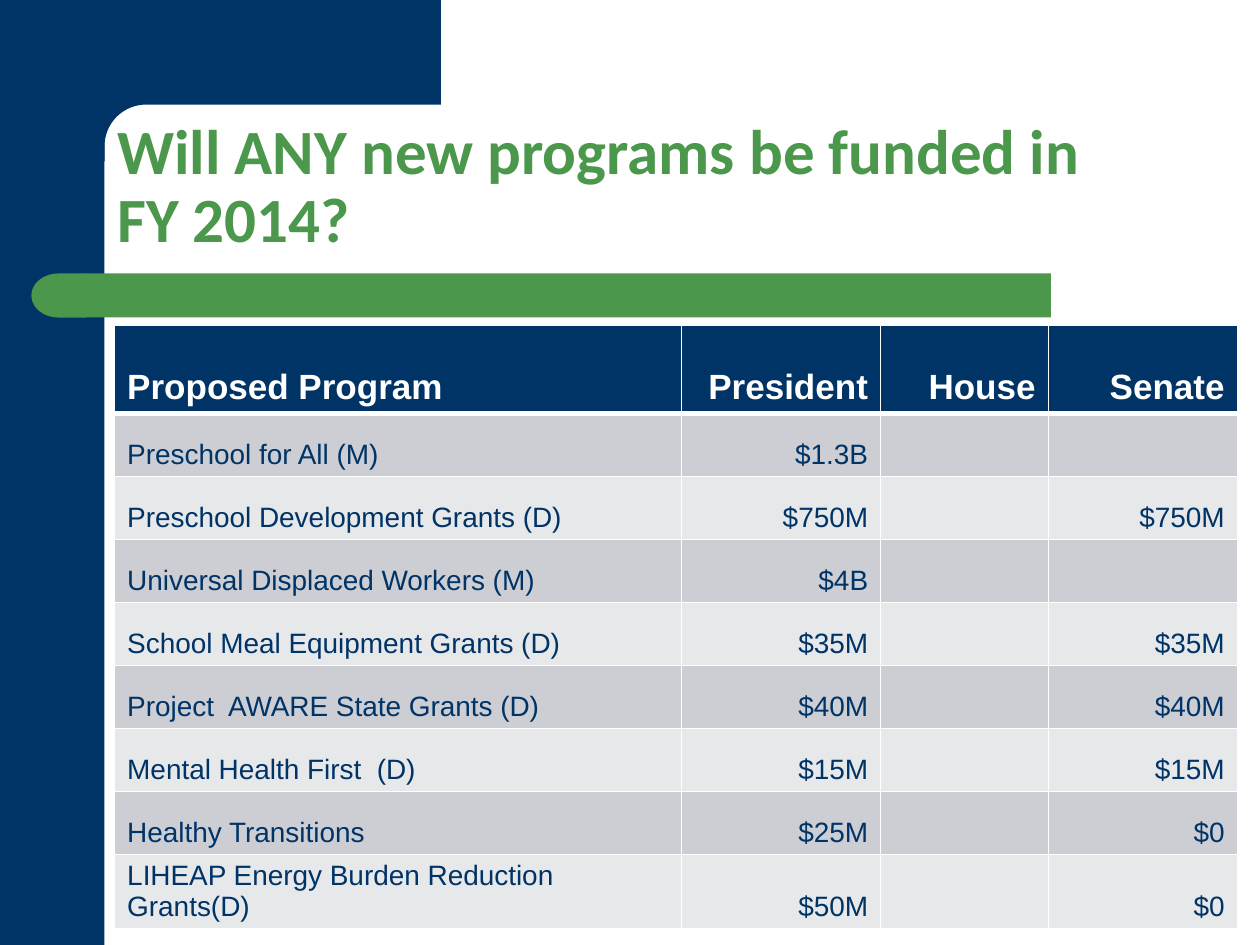
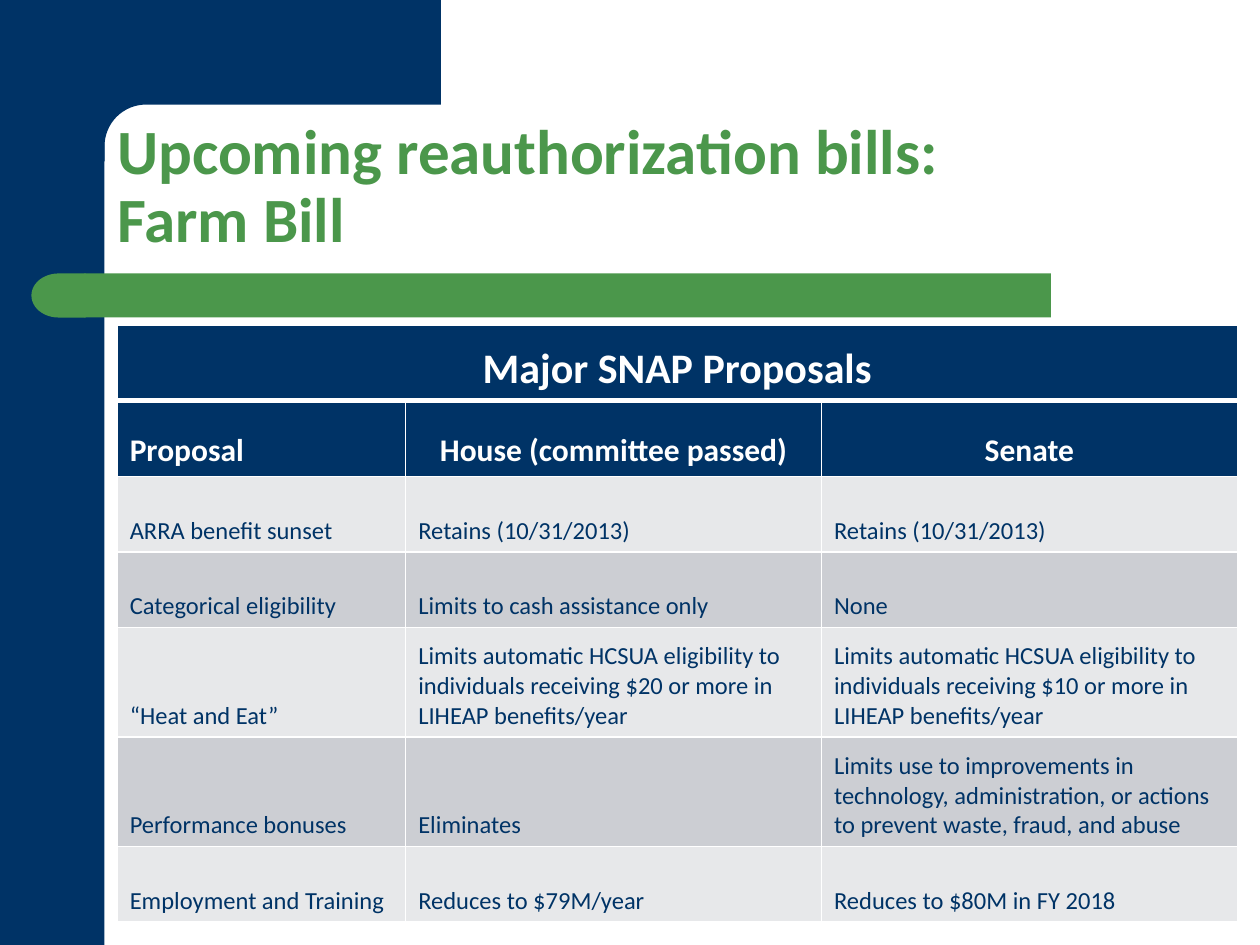
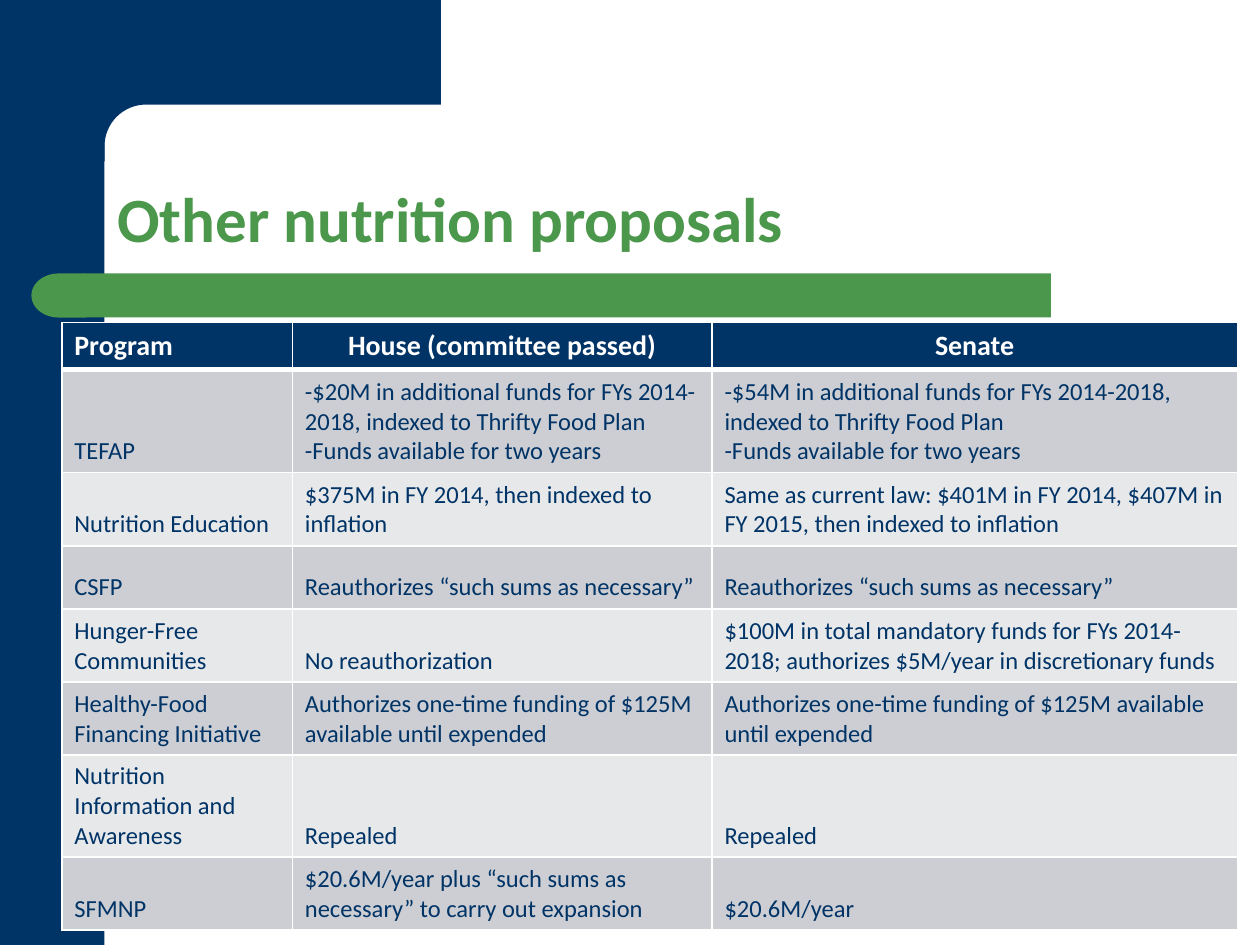
from math import cos, pi, sin

from pptx import Presentation
from pptx.dml.color import RGBColor
from pptx.enum.shapes import MSO_SHAPE
from pptx.enum.text import MSO_ANCHOR, MSO_AUTO_SIZE, PP_ALIGN
from pptx.oxml.ns import qn
from pptx.util import Inches, Pt
from lxml.etree import SubElement

NAVY = RGBColor(0x00, 0x33, 0x66)
GREEN = RGBColor(0x4B, 0x97, 0x4B)
WHITE = RGBColor(0xFF, 0xFF, 0xFF)
DARK_BAND = RGBColor(0xCC, 0xCE, 0xD3)
LIGHT_BAND = RGBColor(0xE7, 0xE8, 0xEA)

L, C, R = PP_ALIGN.LEFT, PP_ALIGN.CENTER, PP_ALIGN.RIGHT
SIDE = 0.83
TABLE_RIGHT = 9.82

SLIDES = [
    {
        "title": ["Will ANY new programs be funded in ", "FY 2014?"],
        "top": 2.58,
        "cols": [4.5, 1.58, 1.33, 1.5],
        "heights": [0.7] + [0.5] * 8,
        "font": "Arial",
        "head_sizes": [20],
        "body_size": 16,
        "head_align": [L, R, R, R],
        "body_align": [L, R, R, R],
        "rows": [
            ["Proposed Program", "President", "House", "Senate"],
            ["Preschool for All (M)", "$1.3B", "", ""],
            ["Preschool Development Grants (D)", "$750M", "", "$750M"],
            ["Universal Displaced Workers (M)", "$4B", "", ""],
            ["School Meal Equipment Grants (D)", "$35M", "", "$35M"],
            ["Project  AWARE State Grants (D)", "$40M", "", "$40M"],
            ["Mental Health First  (D)", "$15M", "", "$15M"],
            ["Healthy Transitions", "$25M", "", "$0"],
            ["LIHEAP Energy Burden Reduction Grants(D)", "$50M", "", "$0"],
        ],
    },
    {
        "title": ["Upcoming reauthorization bills: ", "Farm Bill"],
        "top": 2.58,
        "cols": [2.29, 3.3, 3.3],
        "heights": [0.6, 0.6, 0.6, 0.6, 0.87, 0.87, 0.6],
        "font": "Calibri",
        "head_sizes": [24, 18],
        "body_size": 14,
        "head_align": [L, C, C],
        "body_align": [L, L, L],
        "rows": [
            ["Major SNAP Proposals"],
            ["Proposal", "House (committee passed)", "Senate"],
            ["ARRA benefit sunset", "Retains (10/31/2013)", "Retains (10/31/2013)"],
            ["Categorical eligibility", "Limits to cash assistance only", "None"],
            ["“Heat and Eat”",
             "Limits automatic HCSUA eligibility to individuals receiving $20 or more in LIHEAP benefits/year",
             "Limits automatic HCSUA eligibility to individuals receiving $10 or more in LIHEAP benefits/year"],
            ["Performance bonuses", "Eliminates",
             "Limits use to improvements in technology, administration, or actions to prevent waste, fraud, and abuse"],
            ["Employment and Training", "Reduces to $79M/year", "Reduces to $80M in FY 2018"],
        ],
    },
    {
        "title": ["Other nutrition proposals"],
        "top": 2.56,
        "cols": [1.83, 3.33, 4.17],
        "heights": [0.37, 0.82, 0.58, 0.5] + [0.58] * 4,
        "font": "Calibri",
        "head_sizes": [16],
        "body_size": 14,
        "head_align": [L, C, C],
        "body_align": [L, L, L],
        "rows": [
            ["Program", "House (committee passed)", "Senate"],
            ["TEFAP",
             "-$20M in additional funds for FYs 2014-2018, indexed to Thrifty Food Plan\n-Funds available for two years",
             "-$54M in additional funds for FYs 2014-2018, indexed to Thrifty Food Plan\n-Funds available for two years"],
            ["Nutrition Education", "$375M in FY 2014, then indexed to inflation",
             "Same as current law: $401M in FY 2014, $407M in FY 2015, then indexed to inflation"],
            ["CSFP", "Reauthorizes “such sums as necessary”", "Reauthorizes “such sums as necessary”"],
            ["Hunger-Free Communities", "No reauthorization",
             "$100M in total mandatory funds for FYs 2014-2018; authorizes $5M/year in discretionary funds"],
            ["Healthy-Food Financing Initiative",
             "Authorizes one-time funding of $125M available until expended",
             "Authorizes one-time funding of $125M available until expended"],
            ["Nutrition Information and Awareness", "Repealed", "Repealed"],
            ["SFMNP", "$20.6M/year plus “such sums as necessary” to carry out expansion", "$20.6M/year"],
        ],
    },
]


def add_run(p, text, font, size, color, bold):
    r = p.add_run()
    r.text = text
    r.font.name, r.font.size, r.font.bold = font, Pt(size), bold
    r.font.color.rgb = color


def paint(sp, color):
    sp.shadow.inherit = False
    sp.fill.solid()
    sp.fill.fore_color.rgb = color
    sp.line.fill.background()
    return sp


def add_block(s, kind, box, color):
    return paint(s.shapes.add_shape(kind, *map(Inches, box)), color)


def add_corner(s):
    radius, center, steps = 0.33, SIDE + 0.33, 16
    angles = [pi / 2 * i / steps for i in range(steps + 1)]
    arc = [(center - radius * sin(a), center - radius * cos(a)) for a in angles]
    points = [(3.5, 0), (3.5, SIDE), *arc, (SIDE, 1.28), (0.5, 1.28), (0.5, 0)]
    points = [(Inches(x), Inches(y)) for x, y in points]
    fb = s.shapes.build_freeform(*points[0])
    fb.add_line_segments(points[1:], close=True)
    return paint(fb.convert_to_shape(), NAVY)


def move_frame_to_layout(s, layout):
    cap = add_block(s, MSO_SHAPE.FLOWCHART_DELAY, (0.25, 2.17, 0.43, 0.35), GREEN)
    cap.element.spPr.xfrm.set("flipH", "1")
    frame = [
        add_block(s, MSO_SHAPE.RECTANGLE, (0, 0, SIDE, 7.5), NAVY),
        add_corner(s),
        add_block(s, MSO_SHAPE.RECTANGLE, (0.67, 2.17, 7.67, 0.35), GREEN),
        cap,
    ]
    for i, sp in enumerate(frame):
        layout.shapes.element.insert(2 + i, sp.element)


def set_title(s, lines):
    sp = s.shapes.title
    sp.left, sp.top, sp.width, sp.height = map(Inches, (SIDE, SIDE, 8.67, 1.25))
    tf = sp.text_frame
    tf.word_wrap, tf.auto_size = True, MSO_AUTO_SIZE.NONE
    tf.vertical_anchor = MSO_ANCHOR.BOTTOM
    p = tf.paragraphs[0]
    p.alignment, p.line_spacing = L, 0.9
    for i, line in enumerate(lines):
        if i:
            p.add_line_break()
        add_run(p, line, "Calibri", 36, GREEN, True)


def set_borders(cell, top, bottom):
    tcPr = cell._tc.get_or_add_tcPr()
    for side, width in (("L", 1), ("R", 1), ("T", top), ("B", bottom)):
        ln = SubElement(tcPr, qn(f"a:ln{side}"), w=str(Pt(width)))
        fill = SubElement(ln, qn("a:solidFill"))
        SubElement(fill, qn("a:srgbClr"), val=str(WHITE))


def add_grid(s, spec):
    rows, cols, heads = spec["rows"], spec["cols"], spec["head_sizes"]
    width = sum(cols)
    box = (TABLE_RIGHT - width, spec["top"], width, sum(spec["heights"]))
    table = s.shapes.add_table(len(rows), len(cols), *map(Inches, box)).table
    table.first_row = table.horz_banding = False
    for col, w in zip(table.columns, cols):
        col.width = Inches(w)
    for i, texts in enumerate(rows):
        table.rows[i].height = Inches(spec["heights"][i])
        head = i < len(heads)
        size = heads[i] if head else spec["body_size"]
        aligns = spec["head_align" if head else "body_align"]
        band = DARK_BAND if i % 2 else LIGHT_BAND
        for j in range(len(cols)):
            cell = table.cell(i, j)
            set_borders(cell, 3 if i == 1 else 1, 3 if i == 0 else 1)
            cell.fill.solid()
            cell.fill.fore_color.rgb = NAVY if head else band
            cell.vertical_anchor = MSO_ANCHOR.BOTTOM
        if len(texts) == 1:
            table.cell(i, 0).merge(table.cell(i, len(cols) - 1))
            aligns = [C]
        for j, text in enumerate(texts):
            tf = table.cell(i, j).text_frame
            for k, line in enumerate(text.split("\n") if text else []):
                p = tf.add_paragraph() if k else tf.paragraphs[0]
                p.alignment = aligns[j]
                add_run(p, line, spec["font"], size, WHITE if head else NAVY, head)


def main():
    prs = Presentation()
    prs.slide_width, prs.slide_height = Inches(10), Inches(7.5)
    layout = prs.slide_layouts[5]
    for i, spec in enumerate(SLIDES):
        s = prs.slides.add_slide(layout)
        if i == 0:
            move_frame_to_layout(s, layout)
        set_title(s, spec["title"])
        add_grid(s, spec)
    prs.save("out.pptx")


if __name__ == "__main__":
    main()
